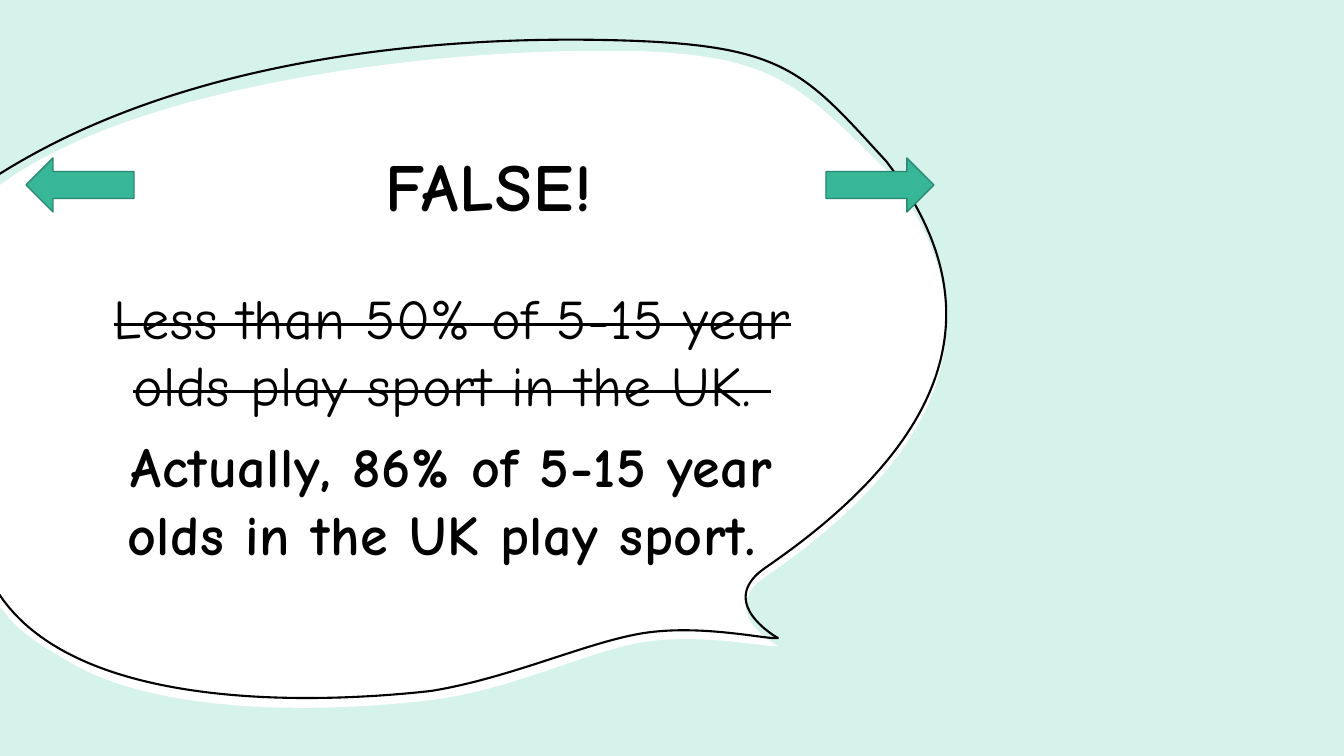
import math
from dataclasses import dataclass, field

from lxml import etree
from pptx import Presentation
from pptx import util as u
from pptx.dml.color import RGBColor
from pptx.enum import shapes, text
from pptx.oxml.ns import qn

W, H = 1344, 756
PX = u.Inches(13.333) / W
COLORS = {"mint": "D5F2EB", "white": "FFFFFF", "black": "000000",
          "green": "38B698", "dark_green": "298770"}


@dataclass
class Outline:
    """Two numbers in a segment end a straight line; six give a cubic curve."""
    box: tuple[int, int, int, int]
    start: tuple[int, int]
    segments: list[tuple[int, ...]]
    closed: bool = False
    rotation: float = 0


@dataclass
class Line:
    content: str
    font: dict
    run_xml: dict = field(default_factory=dict)


@dataclass
class TextBlock:
    box: tuple[int, int, int, int]
    lines: list[Line]
    bottom_inset: int = 5


@dataclass
class Arrow:
    kind: shapes.MSO_SHAPE
    x: int


BUBBLE_FILL = Outline((0, 50, 946, 657), (610, 51), [
    (620, 51, 629, 51, 637, 51), (772, 56, 799, 83, 886, 170),
    (980, 292, 981, 429, 765, 577), (715, 612, 778, 646, 778, 646),
    (769, 648, 703, 633, 644, 642), (587, 651, 513, 690, 431, 700),
    (350, 710, 165, 721, 66, 660), (44, 647, 19, 633, 3, 610),
    (0, 607), (0, 185), (3, 183), (22, 169, 47, 155, 78, 141),
    (234, 72, 471, 49, 610, 51),
], closed=True)
BUBBLE_LINE = Outline((-45, 26, 996, 696), (-2, 175), [
    (205, 44, 489, 35, 638, 41), (787, 47, 807, 75, 886, 161),
    (980, 283, 981, 420, 765, 568), (715, 603, 778, 638, 778, 638),
    (769, 640, 703, 624, 644, 633), (587, 642, 511, 678, 431, 691),
    (351, 700, 83, 721, -1, 594),
], rotation=343.1)
BLOCKS = [
    TextBlock((130, 111, 718, 147), [
        Line("FALSE!", {"size": u.Pt(48), "bold": True}, {"spc": "100"})]),
    TextBlock((92, 236, 721, 431), [
        Line("Less than 50% of 5-15 year olds play sport in the UK. ",
             {"size": u.Pt(40), "bold": False},
             {"spc": "50", "strike": "sngStrike"}),
        Line("Actually, 86% of 5-15 year olds in the UK play sport. ",
             {"size": u.Pt(40), "bold": True}, {"spc": "50"})],
        bottom_inset=58),
]
ARROWS = [Arrow(shapes.MSO_SHAPE.LEFT_ARROW, 26),
          Arrow(shapes.MSO_SHAPE.RIGHT_ARROW, 826)]


def px(n: float) -> int:
    return round(n * PX)


def rgb(name: str) -> RGBColor:
    return RGBColor.from_string(COLORS[name])


def style(sp, fill: str | None, line: str | None, width: float = 1) -> None:
    sp.shadow.inherit = False
    if fill:
        sp.fill.solid()
        sp.fill.fore_color.rgb = rgb(fill)
    else:
        sp.fill.background()
    if line:
        sp.line.color.rgb = rgb(line)
        sp.line.width = u.Pt(width)
    else:
        sp.line.fill.background()


def add_outline(s, outline: Outline):
    """Span the box with a freeform, then give its path the real segments."""
    left, top, width, height = outline.box
    builder = s.shapes.build_freeform(px(left), px(top), scale=1.0)
    builder.add_line_segments([(px(left + width), px(top + height))], close=False)
    sp = builder.convert_to_shape()
    sp.rotation = outline.rotation
    path = next(sp._element.iter(qn("a:path")))
    for child in list(path):
        path.remove(child)
    angle = math.radians(-outline.rotation)
    cos, sin = math.cos(angle), math.sin(angle)

    def add_segment(tag: str, numbers: tuple[int, ...]) -> None:
        segment = etree.SubElement(path, qn(tag))
        for x, y in zip(numbers[::2], numbers[1::2]):
            dx, dy = x - left - width / 2, y - top - height / 2
            etree.SubElement(segment, qn("a:pt"),
                             x=str(px(dx * cos - dy * sin + width / 2)),
                             y=str(px(dx * sin + dy * cos + height / 2)))

    add_segment("a:moveTo", outline.start)
    for numbers in outline.segments:
        add_segment("a:lnTo" if len(numbers) == 2 else "a:cubicBezTo", numbers)
    if outline.closed:
        etree.SubElement(path, qn("a:close"))
    return sp


def add_text(s, block: TextBlock) -> None:
    tf = s.shapes.add_textbox(*map(px, block.box)).text_frame
    tf.word_wrap = True
    tf.vertical_anchor = text.MSO_ANCHOR.MIDDLE
    tf.margin_bottom = px(block.bottom_inset)
    for i, line in enumerate(block.lines):
        p = tf.add_paragraph() if i else tf.paragraphs[0]
        p.alignment = text.PP_ALIGN.CENTER
        if i:
            p.space_before = u.Pt(10)
        r = p.add_run()
        r.text = line.content
        for name, value in {"name": "Comic Neue", **line.font}.items():
            setattr(r.font, name, value)
        r.font.color.rgb = rgb("black")
        for name, value in line.run_xml.items():
            r._r.get_or_add_rPr().set(name, value)


def add_preset(s, kind: shapes.MSO_SHAPE, box: tuple[int, int, int, int],
               fill: str, line: str | None) -> None:
    style(s.shapes.add_shape(kind, *map(px, box)), fill, line)


def main() -> None:
    prs = Presentation()
    prs.slide_width, prs.slide_height = px(W), px(H)
    s = prs.slides.add_slide(prs.slide_layouts[6])
    s.background.fill.solid()
    s.background.fill.fore_color.rgb = rgb("mint")

    add_preset(s, shapes.MSO_SHAPE.RECTANGLE, (0, 0, W, H), "mint", None)
    style(add_outline(s, BUBBLE_FILL), "white", None)
    for block in BLOCKS:
        add_text(s, block)
    style(add_outline(s, BUBBLE_LINE), None, "black", 1.5)
    for arrow in ARROWS:
        add_preset(s, arrow.kind, (arrow.x, 158, 108, 54), "green", "dark_green")
    prs.save("out.pptx")


if __name__ == "__main__":
    main()
